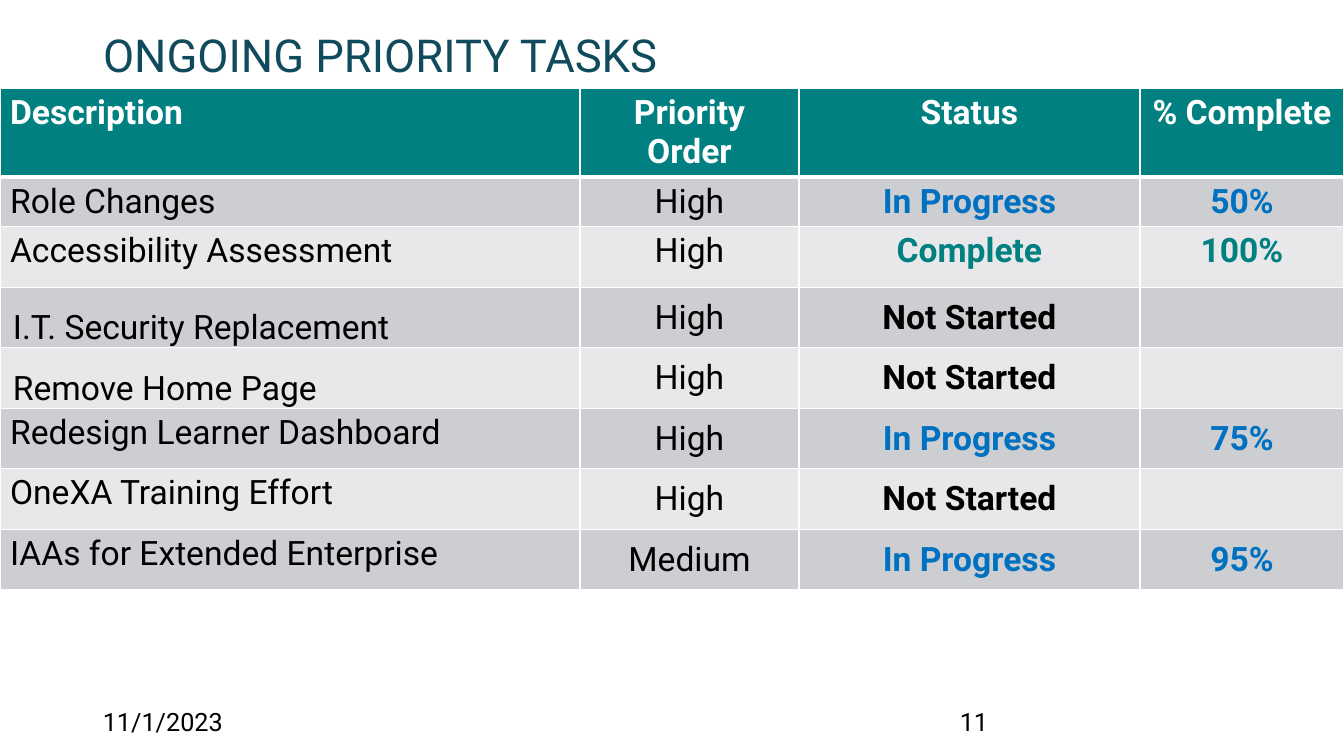
import pptx
import pptx.util
import pptx.oxml
import pptx.oxml.ns
from pptx.dml.color import RGBColor
from pptx.enum.text import MSO_ANCHOR, PP_ALIGN

PX = 914400 / 100.8
FONT = "Roboto"
WHITE = RGBColor(255, 255, 255)
BLACK = RGBColor(0, 0, 0)
TEAL = RGBColor(0, 128, 128)
BLUE = RGBColor(0, 112, 192)
TITLE_BLUE = RGBColor(15, 75, 92)
BANDS = [RGBColor(205, 206, 210), RGBColor(232, 232, 234)]

HEADINGS = ["Description", "Priority Order", "Status", "% Complete"]
TASKS = [
    ["Role Changes", "High", "In Progress", "50%"],
    ["Accessibility Assessment", "High", "Complete", "100%"],
    ["I.T. Security Replacement", "High", "Not Started", ""],
    ["Remove Home Page", "High", "Not Started", ""],
    ["Redesign Learner Dashboard", "High", "In Progress", "75%"],
    ["OneXA Training Effort", "High", "Not Started", ""],
    ["IAAs for Extended Enterprise", "Medium", "In Progress", "95%"],
]
STATUS_COLORS = {"In Progress": BLUE, "Complete": TEAL, "Not Started": BLACK}
COLUMN_WIDTHS = [580, 219, 341, 204]
ROW_HEIGHTS = [89, 49, 61, 60, 61, 60, 61, 60]
LOW_ROWS = (3, 4)  # descriptions that sit at the bottom of the cell


def px(*lengths):
    return [pptx.util.Emu(round(length * PX)) for length in lengths]


def set_font(para, size, color, bold=False):
    para.font.name = FONT
    para.font.size = pptx.util.Pt(size)
    para.font.color.rgb = color
    para.font.bold = bold


deck = pptx.Presentation()
deck.slide_width, deck.slide_height = px(1344, 756)
page = deck.slides.add_slide(deck.slide_layouts[5])

# Title
title = page.shapes.title
title.left, title.top, title.width, title.height = px(93, 21, 1159, 67)
title.text_frame.text = "ONGOING PRIORITY TASKS"
title.text_frame.vertical_anchor = MSO_ANCHOR.MIDDLE
title.text_frame.paragraphs[0].alignment = PP_ALIGN.LEFT
set_font(title.text_frame.paragraphs[0], 32.4, TITLE_BLUE)

# Task table
rows = [HEADINGS] + TASKS
frame = page.shapes.add_table(len(rows), len(HEADINGS),
                              *px(0, 88, sum(COLUMN_WIDTHS), sum(ROW_HEIGHTS)))
table = frame.table
for column, width in zip(table.columns, px(*COLUMN_WIDTHS)):
    column.width = width
for row, height in zip(table.rows, px(*ROW_HEIGHTS)):
    row.height = height

for r, texts in enumerate(rows):
    for c, text in enumerate(texts):
        cell = table.cell(r, c)
        cell.text = text
        cell.fill.solid()
        cell.fill.fore_color.rgb = BANDS[(r - 1) % 2] if r else TEAL

        para = cell.text_frame.paragraphs[0]
        color = WHITE if r == 0 else STATUS_COLORS[texts[2]] if c > 1 else BLACK
        set_font(para, 24, color, bold=r == 0 or c > 1)
        if c:
            para.alignment = PP_ALIGN.CENTER
            if r >= 3:
                cell.vertical_anchor = MSO_ANCHOR.MIDDLE
        elif r in LOW_ROWS:
            cell.vertical_anchor = MSO_ANCHOR.BOTTOM
            (cell.margin_left, cell.margin_top,
             cell.margin_right, cell.margin_bottom) = px(13, 1, 1, 0)

        properties = cell._tc.get_or_add_tcPr()
        for position, side in enumerate("LRTB"):
            heavy = (r == 0 and side == "B") or (r == 1 and side == "T")
            border = pptx.oxml.parse_xml(
                f'<a:ln{side} {pptx.oxml.ns.nsdecls("a")} w="{38100 if heavy else 12700}">'
                f'<a:solidFill><a:srgbClr val="{WHITE}"/></a:solidFill></a:ln{side}>')
            properties.insert(position, border)

# Date and page number
for left, text in [(93, "11/1/2023"), (950, "11")]:
    box = page.shapes.add_textbox(*px(left, 701, 302, 40))
    box.text_frame.word_wrap = True
    box.text_frame.text = text
    set_font(box.text_frame.paragraphs[0], 18, BLACK)

deck.save("out.pptx")
